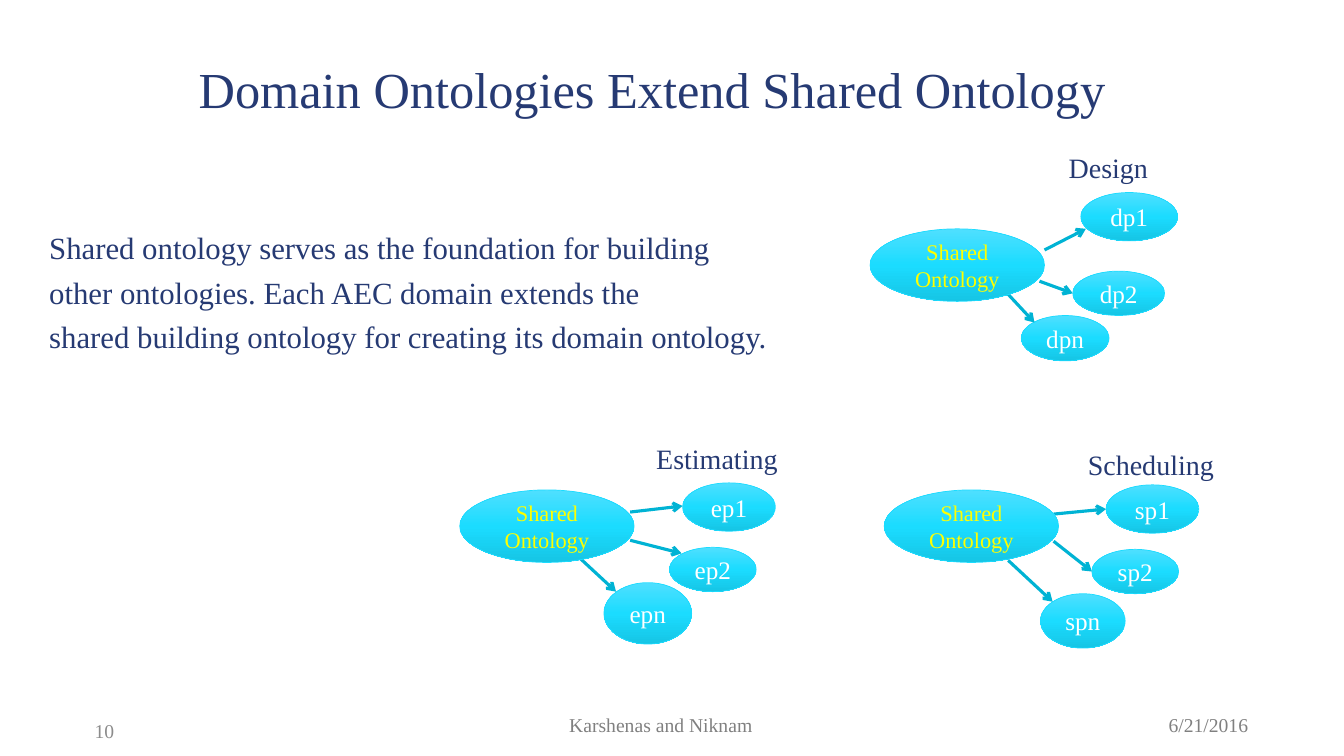
import copy

import pptx
import pptx.util
from pptx.dml.color import RGBColor
from pptx.enum.shapes import MSO_CONNECTOR, MSO_SHAPE
from pptx.enum.text import MSO_ANCHOR, PP_ALIGN
from pptx.oxml.ns import qn
from pptx.util import Inches, Pt
from lxml import etree

FONT = "Times New Roman"
COLORS = {
    "navy": "263A73",
    "footer": "808080",
    "number": "8C8C8C",
    "top": "4FDFFF",
    "cyan": "1BDCFF",
    "bottom": "16C5E5",
    "arrow": "00B3D4",
    "white": "FFFFFF",
    "yellow": "FFFF00",
}
HUB_SIZE = (1.73, 0.72)

# Each domain: heading box, hub corner, then (label, ellipse box, arrow start, arrow end)
DOMAINS = [
    ("Design", (10.5, 1.44, 1.45, 0.44), (8.63, 2.27), [
        ("dp1", (10.72, 1.91, 0.96, 0.48), (10.36, 2.48), (10.77, 2.27)),
        ("dp2", (10.64, 2.69, 0.91, 0.44), (10.31, 2.79), (10.64, 2.91)),
        ("dpn", (10.13, 3.13, 0.87, 0.45), (9.99, 2.91), (10.26, 3.2)),
    ]),
    ("Estimating", (6.41, 4.33, 1.64, 0.4), (4.56, 4.86), [
        ("ep1", (6.77, 4.79, 0.92, 0.48), (6.25, 5.08), (6.77, 5.02)),
        ("ep2", (6.64, 5.43, 0.86, 0.44), (6.25, 5.36), (6.76, 5.49)),
        ("epn", (5.99, 5.78, 0.87, 0.61), (5.7, 5.49), (6.11, 5.87)),
    ]),
    ("Scheduling", (10.69, 4.39, 1.62, 0.4), (8.77, 4.86), [
        ("sp1", (10.97, 4.81, 0.92, 0.48), (10.45, 5.1), (10.97, 5.05)),
        ("sp2", (10.83, 5.45, 0.86, 0.44), (10.45, 5.37), (10.83, 5.67)),
        ("spn", (10.32, 5.89, 0.84, 0.54), (10, 5.56), (10.44, 5.97)),
    ]),
]
FOUNDATION = [
    "Shared ontology serves as the foundation for building",
    "other ontologies. Each AEC domain extends the",
    "shared building ontology for creating its domain ontology.",
]


def rgb(name):
    return RGBColor.from_string(COLORS[name])


def inches(lengths):
    return [Inches(length) for length in lengths]


def format_para(para, size, color, align):
    para.alignment = align
    para.font.name = FONT
    para.font.size = Pt(size)
    para.font.color.rgb = rgb(color)


def add_text(page, place, lines, size, color, align=PP_ALIGN.LEFT,
             anchor=MSO_ANCHOR.TOP, gap=0):
    """Add a text box with one paragraph per line, gap points apart."""
    frame = page.shapes.add_textbox(*inches(place)).text_frame
    frame.word_wrap = True
    frame.vertical_anchor = anchor
    for index, line in enumerate(lines):
        para = frame.add_paragraph() if index else frame.paragraphs[0]
        para.text = line
        format_para(para, size, color, align)
        if index and gap:
            para.space_before = Pt(gap)
    return frame


def fill_gradient(shape):
    """Shade the shape from top to bottom through three cyans."""
    shape.fill.gradient()
    shape.fill.gradient_angle = 270
    first = shape._element.spPr.find(".//" + qn("a:gs"))
    first.addnext(copy.deepcopy(first))
    shades = ("top", "cyan", "bottom")
    for index, stop in enumerate(shape.fill.gradient_stops):
        stop.position = index / 2
        stop.color.rgb = rgb(shades[index])


def add_ellipse(page, place, label, size, color):
    shape = page.shapes.add_shape(MSO_SHAPE.OVAL, *inches(place))
    shape.shadow.inherit = False
    fill_gradient(shape)
    shape.line.color.rgb = rgb("cyan")
    shape.line.width = Pt(0.5)
    frame = shape.text_frame
    frame.word_wrap = True
    frame.vertical_anchor = MSO_ANCHOR.MIDDLE
    frame.text = label
    format_para(frame.paragraphs[0], size, color, PP_ALIGN.CENTER)


def add_arrow(page, start, end):
    arrow = page.shapes.add_connector(MSO_CONNECTOR.STRAIGHT, *inches(start + end))
    arrow.line.color.rgb = rgb("arrow")
    arrow.line.width = Pt(2.25)
    etree.SubElement(arrow.line._get_or_add_ln(), qn("a:tailEnd"), type="arrow")
    etree.SubElement(arrow._element.spPr, qn("a:effectLst"))


def add_domain(page, heading, heading_place, hub_corner, members):
    add_text(page, heading_place, [heading], 20, "navy")
    for label, place, start, end in members:
        add_ellipse(page, place, label, 18, "white")
        add_arrow(page, start, end)
    add_ellipse(page, hub_corner + HUB_SIZE, "Shared Ontology", 16, "yellow")


def set_title(page, text):
    title = page.shapes.title
    title.left, title.top, title.width, title.height = inches((1.87, 0.4, 10.25, 0.83))
    frame = title.text_frame
    frame.text = text
    frame.vertical_anchor = MSO_ANCHOR.BOTTOM
    format_para(frame.paragraphs[0], 36, "navy", PP_ALIGN.LEFT)
    frame.paragraphs[0].line_spacing = 0.85


def main():
    deck = pptx.Presentation()
    deck.slide_width, deck.slide_height = inches((13.33, 7.5))
    page = deck.slides.add_slide(deck.slide_layouts[5])
    set_title(page, "Domain Ontologies Extend Shared Ontology")

    foundation = add_text(page, (0.39, 2.07, 8.4, 1.89), FOUNDATION, 22, "navy",
                          PP_ALIGN.JUSTIFY, MSO_ANCHOR.BOTTOM, gap=5.4)
    foundation.margin_bottom = Inches(0.44)

    for domain in DOMAINS:
        add_domain(page, *domain)

    for text, place in (("Karshenas and Niknam", (5.53, 7.05, 2.05, 0.39)),
                        ("6/21/2016", (11.13, 7.05, 1.71, 0.39))):
        footer = add_text(page, place, [text], 14, "footer", PP_ALIGN.CENTER)
        footer.paragraphs[0].line_spacing = 0.9
    add_text(page, (0.64, 7.05, 0.79, 0.39), ["10"], 14, "number",
             PP_ALIGN.CENTER, MSO_ANCHOR.MIDDLE)

    deck.save("out.pptx")


if __name__ == "__main__":
    main()
